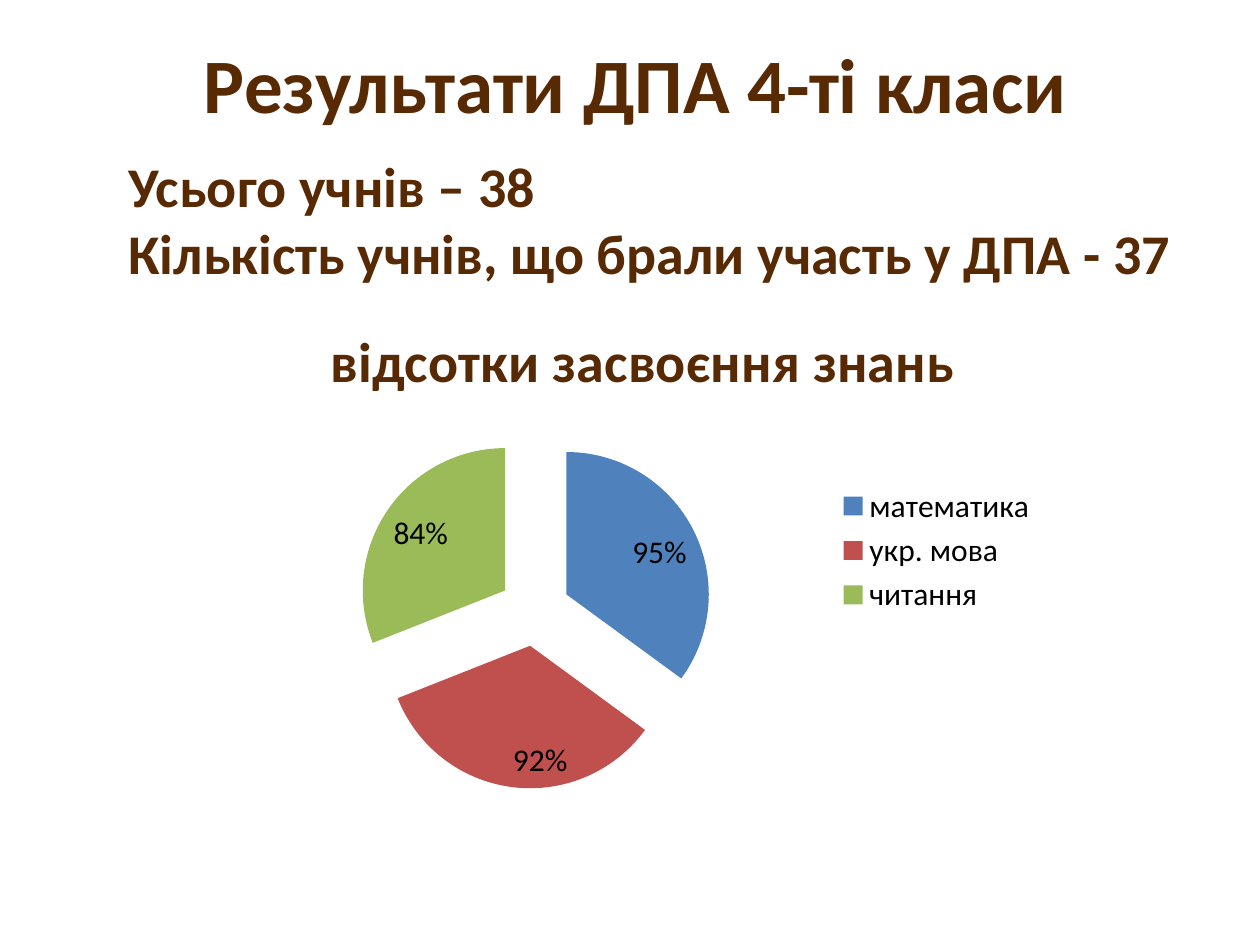
from pptx import Presentation
from pptx.chart.data import CategoryChartData
from pptx.dml.color import RGBColor
from pptx.enum.chart import XL_CHART_TYPE as ChartType, XL_LABEL_POSITION as LabelPos, XL_LEGEND_POSITION as LegendPos
from pptx.enum.text import MSO_ANCHOR as Anchor, PP_ALIGN as Align
from pptx.util import Emu, Pt

BROWN = RGBColor(0x58, 0x2A, 0x04)
BLACK = RGBColor(0, 0, 0)
BLUE = RGBColor(0x4F, 0x81, 0xBD)
RED = RGBColor(0xC0, 0x50, 0x4D)
GREEN = RGBColor(0x9B, 0xBB, 0x59)
FONT = "Calibri"

TITLE = "Результати ДПА 4-ті класи"
FACTS = ["Усього учнів – 38", "Кількість учнів, що брали участь у ДПА - 37"]
CHART_TITLE = "відсотки засвоєння знань"
SUBJECTS = [("математика", 0.95, BLUE), ("укр. мова", 0.92, RED), ("читання", 0.84, GREEN)]

TITLE_BOX = (69, 0, 1134, 166)
FACTS_BOX = (116, 145, 1087, 149)
CHART_BOX = (236, 295, 814, 511)


def px(n):
    return Emu(n * 914400 // 126)


def set_font(font, size, color, bold=False):
    font.name, font.size, font.bold = FONT, Pt(size), bold
    font.color.rgb = color


def add_text(s, box, lines, size, align, anchor):
    tf = s.shapes.add_textbox(*map(px, box)).text_frame
    tf.word_wrap = True
    tf.vertical_anchor = anchor
    p = tf.paragraphs[0]
    p.alignment = align
    for i, line in enumerate(lines):
        if i:
            p.add_line_break()
        r = p.add_run()
        r.text = line
        set_font(r.font, size, BROWN, True)


def add_pie(s):
    data = CategoryChartData(number_format="0%")
    data.categories = [name for name, _, _ in SUBJECTS]
    data.add_series(CHART_TITLE, [value for _, value, _ in SUBJECTS])
    chart = s.shapes.add_chart(ChartType.PIE, *map(px, CHART_BOX), data).chart
    set_font(chart.font, 18, BLACK)

    chart.has_title = True
    r = chart.chart_title.text_frame.paragraphs[0].add_run()
    r.text = CHART_TITLE
    set_font(r.font, 32, BROWN, True)
    chart.chart_title.include_in_layout = False

    chart.has_legend = True
    chart.legend.position = LegendPos.RIGHT
    chart.legend.include_in_layout = False
    set_font(chart.legend.font, 18, BLACK)

    plot = chart.plots[0]
    plot.vary_by_categories = True
    series = plot.series[0]
    for i, (_, _, color) in enumerate(SUBJECTS):
        fill = series.points[i].format.fill
        fill.solid()
        fill.fore_color.rgb = color
    explosion = series._element.makeelement(
        "{http://schemas.openxmlformats.org/drawingml/2006/chart}explosion", {"val": "25"})
    series._element.find("{*}dPt").addprevious(explosion)

    labels = series.data_labels
    labels.show_value = True
    labels.show_percentage = False
    labels.number_format = "0%"
    labels.number_format_is_linked = False
    labels.position = LabelPos.INSIDE_END
    set_font(labels.font, 18, BLACK)


def main():
    prs = Presentation()
    prs.slide_width, prs.slide_height = px(1260), px(945)
    s = prs.slides.add_slide(prs.slide_layouts[6])
    add_text(s, TITLE_BOX, [TITLE], 44, Align.CENTER, Anchor.MIDDLE)
    add_text(s, FACTS_BOX, FACTS, 32, Align.LEFT, Anchor.TOP)
    add_pie(s)
    prs.save("out.pptx")


if __name__ == "__main__":
    main()
